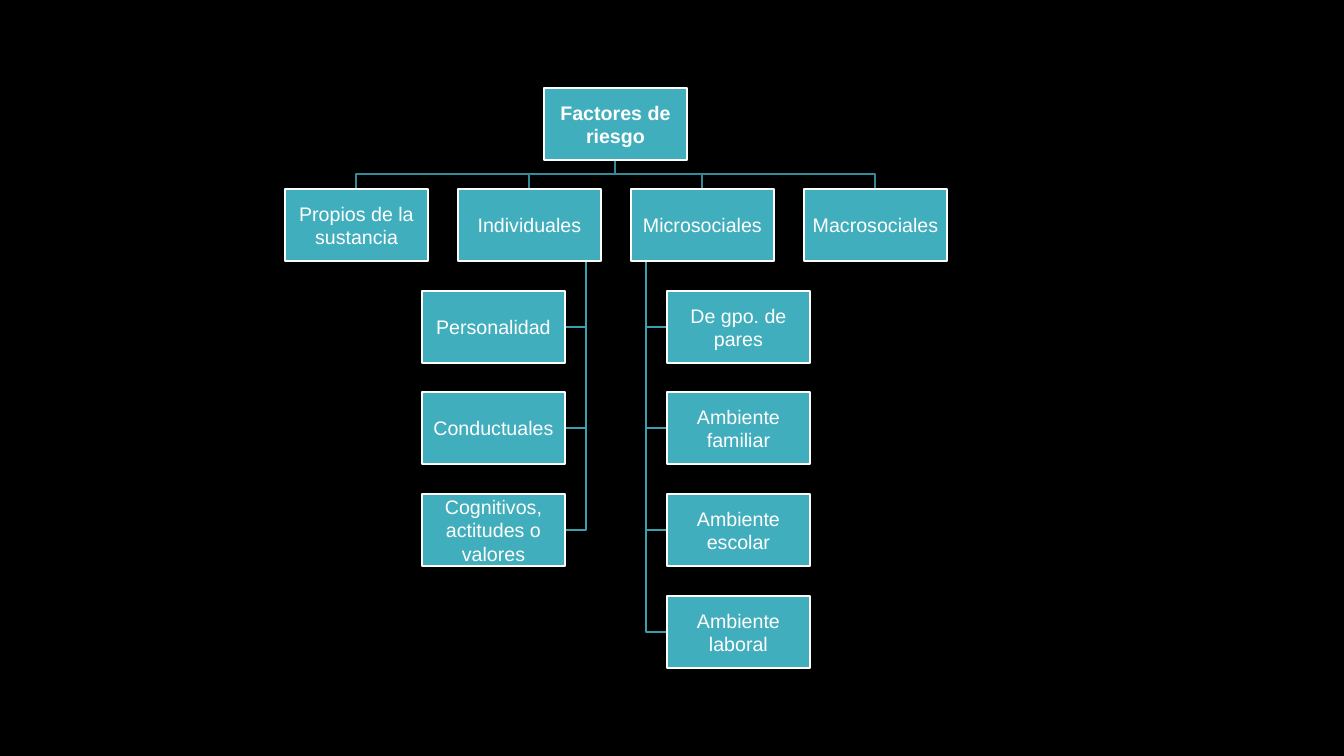
"""Build an organisation chart of risk factors."""
from dataclasses import dataclass

from pptx import Presentation
from pptx import util as u
from pptx.dml.color import RGBColor
from pptx.enum import shapes, text

PX = 914400 / 100.8
BOX_W, BOX_H = 143, 72
LEFT, TOP = 285, 88
COLUMN_STEP = 173
TRUNK_INSET, STUB = 15, 21

ROOT = "Factores de riesgo"
BRANCHES = [
    ("Propios de la sustancia", "right", []),
    ("Individuales", "left",
     ["Personalidad", "Conductuales", "Cognitivos, actitudes o valores"]),
    ("Microsociales", "right",
     ["De gpo. de pares", "Ambiente familiar", "Ambiente escolar", "Ambiente laboral"]),
    ("Macrosociales", "right", []),
]


@dataclass(frozen=True)
class Theme:
    """Colours and type of the chart."""
    background: RGBColor = RGBColor.from_string("000000")
    box: RGBColor = RGBColor.from_string("41AEBD")
    white: RGBColor = RGBColor.from_string("FFFFFF")
    upper_line: RGBColor = RGBColor.from_string("348B97")
    lower_line: RGBColor = RGBColor.from_string("3B9EAC")
    font: str = "Arial"
    size: u.Length = u.Pt(14)
    line: u.Length = u.Pt(1)


THEME = Theme()


def px(value):
    """Turn pixels into EMU."""
    return u.Emu(round(value * PX))


def row_top(row):
    """Return the top of a row of boxes."""
    return TOP + row * 508 // 5


def add_box(page, label, left, row, bold=False):
    """Add one labelled box."""
    box = page.shapes.add_shape(shapes.MSO_SHAPE.RECTANGLE, px(left),
                                px(row_top(row)), px(BOX_W), px(BOX_H))
    box.shadow.inherit = False
    box.fill.solid()
    box.fill.fore_color.rgb = THEME.box
    box.line.color.rgb = THEME.white
    box.line.width = THEME.line
    frame = box.text_frame
    frame.word_wrap = True
    frame.vertical_anchor = text.MSO_ANCHOR.MIDDLE
    frame.margin_left = frame.margin_right = px(1)
    frame.margin_top = frame.margin_bottom = px(1)
    para = frame.paragraphs[0]
    para.text = label
    para.alignment = text.PP_ALIGN.CENTER
    para.font.name = THEME.font
    para.font.size = THEME.size
    para.font.bold = bold
    para.font.color.rgb = THEME.white


def add_elbow(page, points, color):
    """Add an open bent line through the points."""
    start, *rest = points
    builder = page.shapes.build_freeform(*start, scale=PX)
    builder.add_line_segments(rest, close=False)
    elbow = builder.convert_to_shape()
    elbow.shadow.inherit = False
    elbow.fill.background()
    elbow.line.color.rgb = color
    elbow.line.width = THEME.line


def add_children(page, labels, parent_left, side):
    """Hang a column of boxes from one side of a branch."""
    if side == "left":
        trunk = parent_left + BOX_W - TRUNK_INSET
        edge = trunk - STUB
        left = edge - BOX_W
    else:
        trunk = parent_left + TRUNK_INSET
        left = edge = trunk + STUB
    start = row_top(1) + BOX_H
    for row, label in enumerate(labels, start=2):
        middle = row_top(row) + BOX_H // 2
        add_elbow(page, [(trunk, start), (trunk, middle), (edge, middle)],
                  THEME.lower_line)
        add_box(page, label, left, row)


def add_branches(page, root_left):
    """Add the four branches with their lines and children."""
    root_middle = root_left + BOX_W // 2
    root_bottom = row_top(0) + BOX_H
    bar = (root_bottom + row_top(1)) // 2
    for column, (label, side, children) in enumerate(BRANCHES):
        left = LEFT + column * COLUMN_STEP
        middle = left + BOX_W // 2
        add_elbow(page, [(root_middle, root_bottom), (root_middle, bar),
                         (middle, bar), (middle, row_top(1))], THEME.upper_line)
        add_children(page, children, left, side)
        add_box(page, label, left, 1)


def main():
    """Build and save the deck."""
    deck = Presentation()
    deck.slide_width, deck.slide_height = px(1344), px(756)
    page = deck.slides.add_slide(deck.slide_layouts[6])
    page.background.fill.solid()
    page.background.fill.fore_color.rgb = THEME.background
    root_left = LEFT + (len(BRANCHES) - 1) * COLUMN_STEP // 2
    add_branches(page, root_left)
    add_box(page, ROOT, root_left, 0, bold=True)
    deck.save("out.pptx")


if __name__ == "__main__":
    main()
